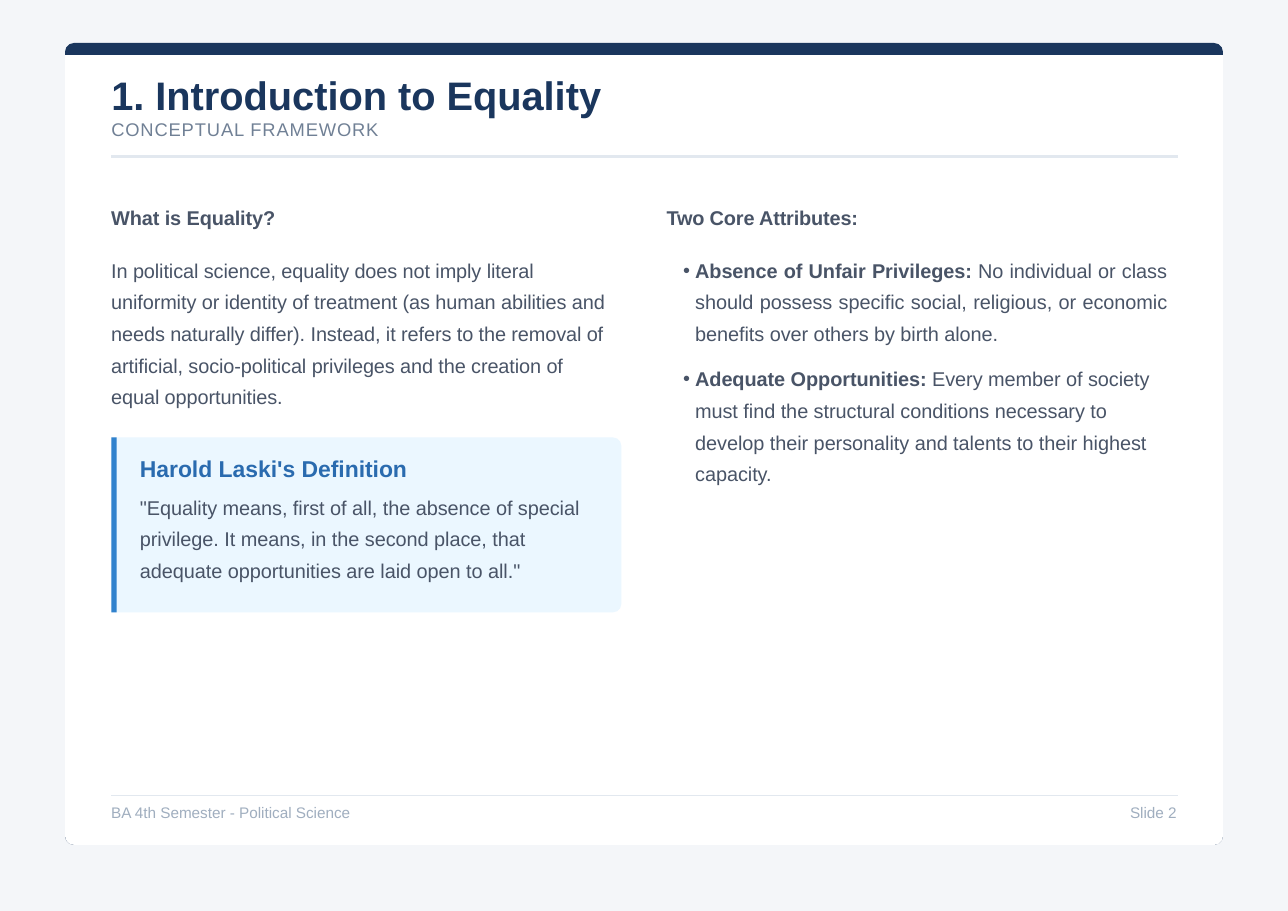
from lxml.etree import SubElement
from pptx import Presentation
from pptx.dml.color import RGBColor
from pptx.enum.shapes import MSO_CONNECTOR, MSO_SHAPE
from pptx.enum.text import MSO_ANCHOR, MSO_AUTO_SIZE, PP_ALIGN
from pptx.oxml.ns import qn
from pptx.util import Inches, Pt

COLOURS = {
    "page": "F4F6F9", "card": "FFFFFF", "navy": "1A365D", "rule": "E2E8EF",
    "callout": "EBF7FF", "accent": "3182CD", "quote": "2A6BAF",
    "subtitle": "708095", "text": "495467", "footer": "A0AEBF",
}
LEFT, RIGHT, RADIUS = 1.01, 10.69, 0.08
BODY = {"line_spacing": Pt(20.7)}
BULLET = {**BODY, "space_before": Pt(9)}


def colour(name):
    """Return the named colour."""
    return RGBColor.from_string(COLOURS[name])


def set_values(target, values):
    """Set each attribute of the target from a dict."""
    for name, value in values.items():
        setattr(target, name, value)


def add_panel(page, kind, place, fill, radius=None, rotation=0):
    """Add a plain filled shape, with corners of the given radius."""
    panel = page.shapes.add_shape(kind, *map(Inches, place))
    panel.shadow.inherit = False
    panel.fill.solid()
    panel.fill.fore_color.rgb = colour(fill)
    panel.line.fill.background()
    panel.rotation = rotation
    if radius:
        panel.adjustments[0] = radius / min(place[2:])


def add_rule(page, top, width):
    """Add a horizontal rule across the content area."""
    rule = page.shapes.add_connector(
        MSO_CONNECTOR.STRAIGHT, Inches(LEFT), Inches(top), Inches(RIGHT), Inches(top))
    rule.line.color.rgb = colour("rule")
    rule.line.width = Pt(width)
    SubElement(rule._element.spPr, qn("a:effectLst"))


def add_bullet(para):
    """Give a paragraph a hanging bullet."""
    properties = para._p.get_or_add_pPr()
    properties.set("marL", str(Inches(0.26)))
    properties.set("indent", str(Inches(-0.11)))
    SubElement(properties, qn("a:buFont")).set("typeface", "Arial")
    SubElement(properties, qn("a:buChar")).set("char", "•")


def fill_para(para, spans, layout, bullet=False):
    """Write (text, size, colour, bold, spacing) spans into a paragraph."""
    set_values(para, layout)
    if bullet:
        add_bullet(para)
    for text, size, tone, bold, spacing in spans:
        span = para.add_run()
        span.text = text
        set_values(span.font, {"name": "Arial", "size": Pt(size), "bold": bold})
        span.font.color.rgb = colour(tone)
        if spacing:
            span._r.get_or_add_rPr().set("spc", str(spacing))


def write_box(box, place, paras):
    """Place a text shape and fill it with paragraphs."""
    set_values(box, dict(zip(("left", "top", "width", "height"), map(Inches, place))))
    frame = box.text_frame
    set_values(frame, {
        "word_wrap": True, "auto_size": MSO_AUTO_SIZE.NONE,
        "vertical_anchor": MSO_ANCHOR.TOP, "margin_left": 0,
        "margin_right": 0, "margin_top": 0, "margin_bottom": 0})
    for index, content in enumerate(paras):
        para = frame.add_paragraph() if index else frame.paragraphs[0]
        fill_para(para, *content)


def add_text(page, place, *paras):
    """Add a text box."""
    write_box(page.shapes.add_textbox(0, 0, 0, 0), place, paras)


def body_span(text, bold=False, spacing=-2):
    """Describe a span of body text."""
    return text, 13, "text", bold, spacing


def add_frame(page):
    """Add the card with its dark top band, and the rules."""
    left, top, width, height, band = 0.59, 0.39, 10.51, 7.28, 0.11
    add_panel(page, MSO_SHAPE.ROUNDED_RECTANGLE, (left, top, width, height), "navy", RADIUS)
    add_panel(page, MSO_SHAPE.ROUND_2_SAME_RECTANGLE,
              (left, top + band, width, height - band), "card", RADIUS, 180)
    add_rule(page, 1.42, 1.5)
    add_rule(page, 7.22, 0.75)


def add_title(page):
    """Write the title above the card and add the subtitle."""
    title = page.shapes.title
    page.shapes._spTree.append(title._element)
    write_box(title, (LEFT, 0.64, 9.68, 0.43),
              [([("1. Introduction to Equality", 26, "navy", True, -4)],
                {"alignment": PP_ALIGN.LEFT})])
    add_text(page, (LEFT, 1.07, 9.68, 0.22),
             ([("CONCEPTUAL FRAMEWORK", 12, "subtitle", False, 58)], {}))


def add_callout(page):
    """Add the definition callout with its accent bar."""
    left, top, width, height = LEFT, 3.97, 4.63, 1.59
    shift = (width - height) / 2
    add_panel(page, MSO_SHAPE.ROUND_2_SAME_RECTANGLE,
              (left + shift, top - shift, height, width), "callout", RADIUS, 90)
    add_panel(page, MSO_SHAPE.RECTANGLE, (left, top, 0.05, height), "accent")
    add_text(
        page, (1.27, 4.13, 4.26, 1.3),
        ([("Harold Laski's Definition", 15, "quote", True, -4)], {}),
        ([body_span('"Equality means, first of all, the absence of special privilege. '
                    "It means, in the second place, that adequate opportunities "
                    'are laid open to all."')], {**BODY, "space_before": Pt(3.4)}))


def add_columns(page):
    """Add the two text columns."""
    after_heading = {**BODY, "space_before": Pt(13.5)}
    add_text(
        page, (LEFT, 1.87, 4.57, 1.95),
        ([body_span("What is Equality?", True, -5)], {}),
        ([body_span("In political science, equality does not imply literal uniformity or "
                    "identity of treatment (as human abilities and needs naturally differ). "
                    "Instead, it refers to the removal of artificial, socio-political "
                    "privileges and the creation of equal opportunities.", spacing=-5)],
         after_heading))
    add_text(
        page, (6.05, 1.87, 4.54, 2.6),
        ([body_span("Two Core Attributes:", True, -8)], {}),
        ([body_span("Absence of Unfair Privileges: ", True),
          body_span("No individual or class should possess specific social, religious, "
                    "or economic benefits over others by birth alone.")],
         {**after_heading, "alignment": PP_ALIGN.JUSTIFY}, True),
        ([body_span("Adequate Opportunities: ", True),
          body_span("Every member of society must find the structural conditions necessary "
                    "to develop their personality and talents to their highest capacity.")],
         BULLET, True))


def add_footer(page):
    """Add the course name and the slide number."""
    add_text(page, (LEFT, 7.29, 4, 0.18),
             ([("BA 4th Semester - Political Science", 10, "footer", False, 0)], {}))
    add_text(page, (RIGHT - 1.01, 7.29, 1, 0.18),
             ([("Slide 2", 10, "footer", False, 0)], {"alignment": PP_ALIGN.RIGHT}))


def main():
    """Build and save the slide."""
    deck = Presentation()
    set_values(deck, {"slide_width": Inches(11.69), "slide_height": Inches(8.27)})
    page = deck.slides.add_slide(deck.slide_layouts[5])
    page.background.fill.solid()
    page.background.fill.fore_color.rgb = colour("page")
    add_frame(page)
    add_title(page)
    add_callout(page)
    add_columns(page)
    add_footer(page)
    deck.save("out.pptx")


if __name__ == "__main__":
    main()
